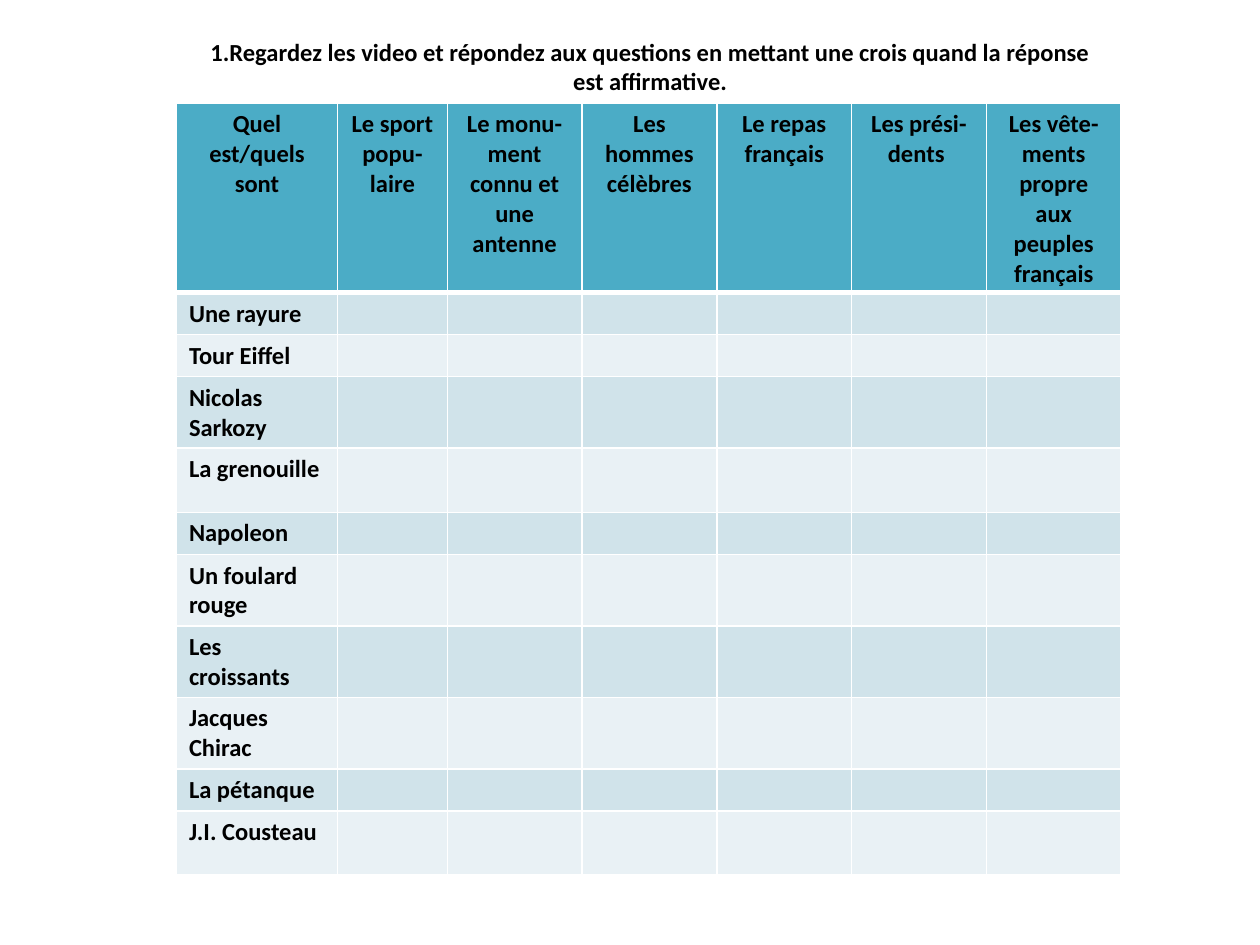
from lxml.etree import SubElement
from pptx import Presentation
from pptx.dml.color import RGBColor
from pptx.enum.text import MSO_ANCHOR, MSO_AUTO_SIZE, PP_ALIGN
from pptx.oxml.ns import qn
from pptx.util import Inches, Pt

BLACK = RGBColor(0x00, 0x00, 0x00)
WHITE = RGBColor(0xFF, 0xFF, 0xFF)
HEADER_TEAL = RGBColor(0x4B, 0xAC, 0xC6)
BAND_COLOURS = (RGBColor(0xD0, 0xE3, 0xEA), RGBColor(0xE9, 0xF1, 0xF5))
TEXT_SIZE = Pt(14)

INSTRUCTION = (
    "1.Regardez les video et répondez aux questions en mettant une crois "
    "quand la réponse est affirmative."
)
QUESTIONS = (
    "Quel est/quels sont",
    "Le sport popu-\nlaire",
    "Le monu-\nment connu et une antenne",
    "Les hommes célèbres",
    "Le repas français",
    "Les prési-\ndents ",
    "Les vête-\nments propre aux peuples français",
)
ANSWERS = (
    ("Une rayure", 0.33),
    ("Tour Eiffel", 0.33),
    ("Nicolas Sarkozy", 0.51),
    ("La grenouille", 0.51),
    ("Napoleon", 0.33),
    ("Un foulard rouge", 0.51),
    ("Les croissants", 0.51),
    ("Jacques Chirac", 0.51),
    ("La pétanque", 0.33),
    ("J.I. Cousteau", 0.51),
)
COLUMN_WIDTHS = (1.28, 0.87) + (1.07,) * 5
HEADER_HEIGHT = 1.47


def write_text(frame, text, alignment):
    """Fill a text frame with bold black Calibri."""
    frame.text = text
    for paragraph in frame.paragraphs:
        paragraph.alignment = alignment
        for run in paragraph.runs:
            run.font.name = "Calibri"
            run.font.size = TEXT_SIZE
            run.font.bold = True
            run.font.color.rgb = BLACK


def add_borders(cell, bottom_width):
    """Draw white borders around a table cell."""
    properties = cell._tc.get_or_add_tcPr()
    widths = {"a:lnL": Pt(1), "a:lnR": Pt(1), "a:lnT": Pt(1), "a:lnB": bottom_width}
    for tag, width in widths.items():
        line = SubElement(properties, qn(tag), w=str(width))
        fill = SubElement(line, qn("a:solidFill"))
        SubElement(fill, qn("a:srgbClr"), val=str(WHITE))


def format_cell(cell, text, colour, alignment, bottom_width=Pt(1)):
    """Set the text, borders and fill of a table cell."""
    add_borders(cell, bottom_width)
    cell.fill.solid()
    cell.fill.fore_color.rgb = colour
    if text:
        write_text(cell.text_frame, text, alignment)
    else:
        blank = cell.text_frame.paragraphs[0]._p
        SubElement(blank, qn("a:endParaRPr"), sz=str(int(TEXT_SIZE.pt * 100)))


def place_title(slide):
    """Place the instruction above the grid."""
    title = slide.shapes.title
    title.left, title.top = Inches(1.54), Inches(0.24)
    title.width, title.height = Inches(7.24), Inches(0.57)
    frame = title.text_frame
    frame.word_wrap = True
    frame.auto_size = MSO_AUTO_SIZE.SHAPE_TO_FIT_TEXT
    frame.vertical_anchor = MSO_ANCHOR.TOP
    write_text(frame, INSTRUCTION, PP_ALIGN.CENTER)


def add_answer_grid(slide):
    """Add the grid of questions and possible answers."""
    heights = [HEADER_HEIGHT] + [height for _, height in ANSWERS]
    grid = slide.shapes.add_table(
        len(heights), len(QUESTIONS), Inches(1.4), Inches(0.82),
        Inches(sum(COLUMN_WIDTHS)), Inches(sum(heights)),
    ).table
    for column, width in zip(grid.columns, COLUMN_WIDTHS):
        column.width = Inches(width)
    for row, height in zip(grid.rows, heights):
        row.height = Inches(height)
    for column, question in enumerate(QUESTIONS):
        format_cell(grid.cell(0, column), question, HEADER_TEAL, PP_ALIGN.CENTER, Pt(3))
    for index, (answer, _) in enumerate(ANSWERS):
        for column in range(len(QUESTIONS)):
            label = answer if column == 0 else ""
            colour = BAND_COLOURS[index % 2]
            format_cell(grid.cell(index + 1, column), label, colour, PP_ALIGN.LEFT)


def main():
    """Build the worksheet slide."""
    presentation = Presentation()
    presentation.slide_width = Inches(10)
    presentation.slide_height = Inches(7.5)
    slide = presentation.slides.add_slide(presentation.slide_layouts[5])
    add_answer_grid(slide)
    place_title(slide)
    presentation.save("out.pptx")


if __name__ == "__main__":
    main()
